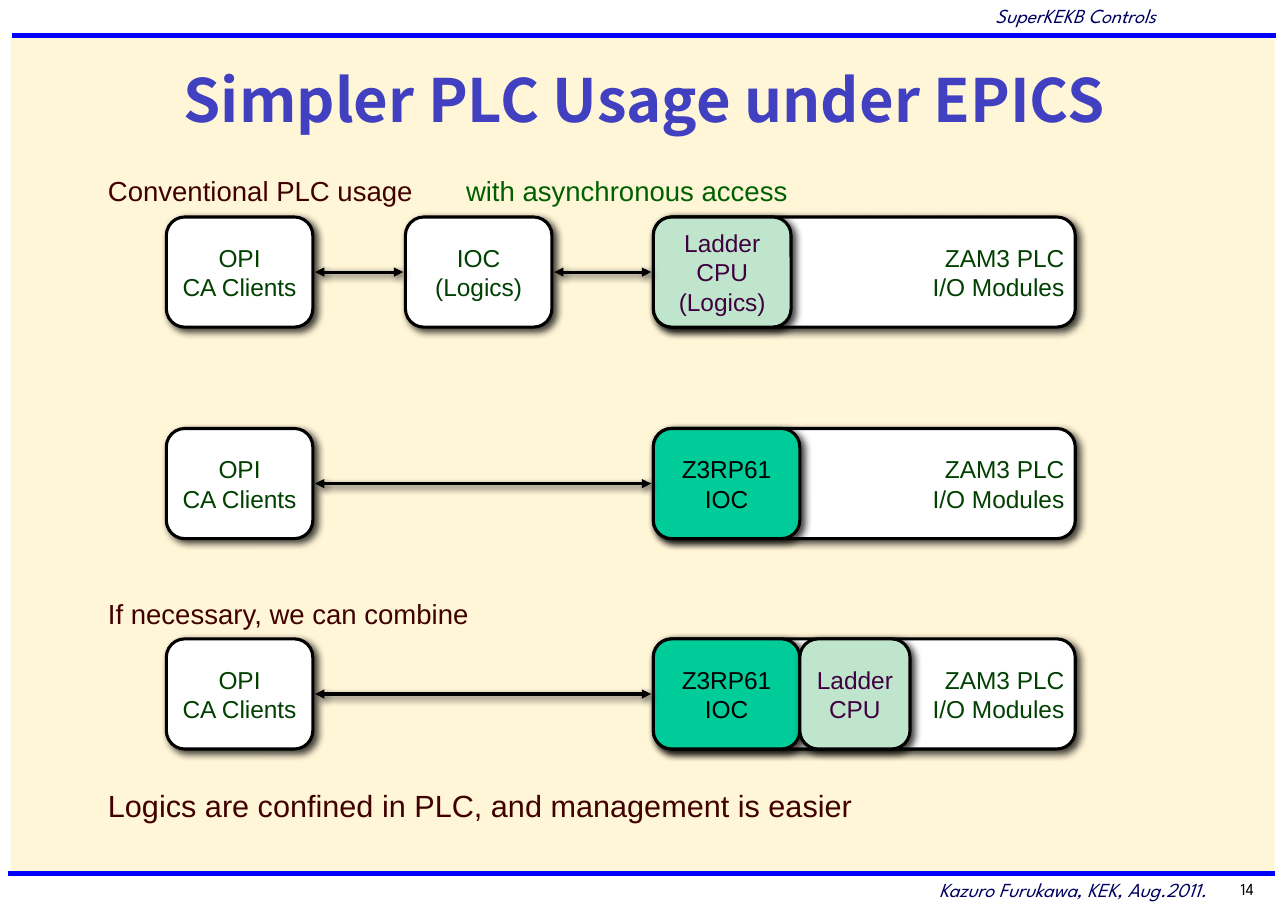
from lxml import etree
from pptx import Presentation
from pptx.dml.color import RGBColor
from pptx.enum.shapes import MSO_CONNECTOR as CONN, MSO_SHAPE as SHAPE
from pptx.enum.text import MSO_ANCHOR as ANCHOR, PP_ALIGN as ALIGN
from pptx.oxml import parse_xml
from pptx.oxml.ns import nsdecls, qn
from pptx.util import Inches, Pt

COLORS = {
    "cream": "FFF5D7", "rule": "0000FF", "title": "4040C0", "navy": "000060",
    "black": "000000", "white": "FFFFFF", "maroon": "400000", "green": "006000",
    "dark_green": "004000", "plum": "400040", "teal": "00CC99", "mint": "BFE6CC",
}
RGB = {name: RGBColor.from_string(value) for name, value in COLORS.items()}
FLAT = f'<a:effectLst {nsdecls("a")}/>'
SHADOW = (
    f'<a:effectLst {nsdecls("a")}><a:outerShdw blurRad="63500" dist="35560" dir="2700000">'
    '<a:srgbClr val="000000"><a:alpha val="75000"/></a:srgbClr></a:outerShdw></a:effectLst>'
)


def write(sp, paragraphs, color, size, font="Arial", align=ALIGN.LEFT,
          anchor=ANCHOR.TOP, inset=(0.05, 0.03), **style):
    tf = sp.text_frame
    x, y = map(Inches, inset)
    frame = {"word_wrap": True, "vertical_anchor": anchor, "margin_left": x,
             "margin_right": x, "margin_top": y, "margin_bottom": y}
    for key, value in frame.items():
        setattr(tf, key, value)
    for i, runs in enumerate(paragraphs):
        p = tf.paragraphs[0] if i == 0 else tf.add_paragraph()
        p.alignment = align
        for text, run_color in runs if isinstance(runs, list) else [(runs, color)]:
            r = p.add_run()
            r.text = text
            for key, value in {"size": Pt(size), "name": font, **style}.items():
                setattr(r.font, key, value)
            r.font.color.rgb = RGB[run_color]


def add_line(x1, y1, x2, y2, color, width, ends=(), effect=FLAT):
    line = s.shapes.add_connector(CONN.STRAIGHT, Inches(x1), Inches(y1), Inches(x2), Inches(y2))
    line.line.color.rgb = RGB[color]
    line.line.width = Pt(width)
    spPr = line._element.spPr
    for end in ends:
        etree.SubElement(spPr.find(qn("a:ln")), qn(end), type="triangle")
    spPr.append(parse_xml(effect))


prs = Presentation()
prs.slide_width, prs.slide_height = Inches(11.69), Inches(8.27)
s = prs.slides.add_slide(prs.slide_layouts[5])

panel = s.shapes.add_shape(SHAPE.RECTANGLE, Inches(0.1), Inches(0.32), Inches(11.47), Inches(7.62))
panel.shadow.inherit = False
panel.fill.solid()
panel.fill.fore_color.rgb = RGB["cream"]
panel.line.fill.background()
add_line(0.11, 0.32, 11.58, 0.32, "rule", 3)
add_line(0.07, 7.93, 11.57, 7.93, "rule", 3)

title = s.shapes.title
panel._element.addnext(title._element)
title.left, title.top, title.width, title.height = map(Inches, (0.18, 0.51, 11.33, 0.78))
write(title, ["Simpler PLC Usage under EPICS"], "title", 39, "Noto Sans CJK JP",
      ALIGN.CENTER, ANCHOR.MIDDLE, (0.11, 0.05), bold=True)

margins = [
    ("SuperKEKB Controls", 7.85, 0, 2.75, "navy", 13, True),
    ("Kazuro Furukawa, KEK, Aug.2011.", 7.85, 7.94, 3.21, "navy", 13, True),
    ("14", 10.81, 7.95, 0.68, "black", 11, False),
]
for text, x, y, w, color, size, italic in margins:
    sp = s.shapes.add_textbox(Inches(x), Inches(y), Inches(w), Inches(0.3))
    write(sp, [text], color, size, "League Spartan", ALIGN.RIGHT, inset=(0.11, 0.03), italic=italic)

captions = [
    ([("Conventional PLC usage\t", "maroon"), ("with asynchronous access", "green")], 1.55, 18),
    ("If necessary, we can combine", 5.39, 18),
    ("Logics are confined in PLC, and management is easier", 7.11, 20),
]
for text, y, size in captions:
    sp = s.shapes.add_textbox(Inches(0.93), Inches(y), Inches(8), Inches(0.38))
    pPr = sp.text_frame.paragraphs[0]._p.get_or_add_pPr()
    tabs = etree.SubElement(pPr, qn("a:tabLst"))
    etree.SubElement(tabs, qn("a:tab"), pos=str(Inches(3.25)), algn="l")
    write(sp, [text], "maroon", size)

OPI_X, IOC_X, PLC_X = 1.51, 3.68, 5.93
BOX_W, BOX_H, GAP = 1.33, 1, 0.02
opi = (OPI_X, BOX_W, ["OPI", "CA Clients"], "white", "dark_green", ALIGN.CENTER)
ioc = (IOC_X, BOX_W, ["IOC", "(Logics)"], "white", "dark_green", ALIGN.CENTER)
plc = (PLC_X, 3.83, ["ZAM3 PLC", "I/O Modules"], "white", "dark_green", ALIGN.RIGHT)
cpu_ioc = (PLC_X, BOX_W, ["Z3RP61", "IOC"], "teal", "black", ALIGN.CENTER)
ladder_logics = (PLC_X, 1.25, ["Ladder", "CPU", "(Logics)"], "mint", "plum", ALIGN.CENTER)
ladder = (PLC_X + BOX_W, 1, ["Ladder", "CPU"], "mint", "plum", ALIGN.CENTER)

rows = [
    (1.97, [opi, ioc, plc, ladder_logics], [(OPI_X, IOC_X), (IOC_X, PLC_X)]),
    (3.89, [opi, plc, cpu_ioc], [(OPI_X, PLC_X)]),
    (5.8, [opi, plc, cpu_ioc, ladder], [(OPI_X, PLC_X)]),
]
for y, boxes, links in rows:
    for x, w, lines, fill, color, align in boxes:
        sp = s.shapes.add_shape(SHAPE.ROUNDED_RECTANGLE, Inches(x), Inches(y), Inches(w), Inches(BOX_H))
        sp.adjustments[0] = 0.167
        sp.fill.solid()
        sp.fill.fore_color.rgb = RGB[fill]
        sp.line.color.rgb = RGB["black"]
        sp.line.width = Pt(2)
        sp._element.spPr.append(parse_xml(SHADOW))
        write(sp, lines, color, 16, align=align, anchor=ANCHOR.MIDDLE)
    for left, right in links:
        mid = y + BOX_H / 2
        add_line(right - GAP, mid, left + BOX_W + GAP, mid, "black", 2,
                 ("a:headEnd", "a:tailEnd"), SHADOW)

prs.save("out.pptx")
